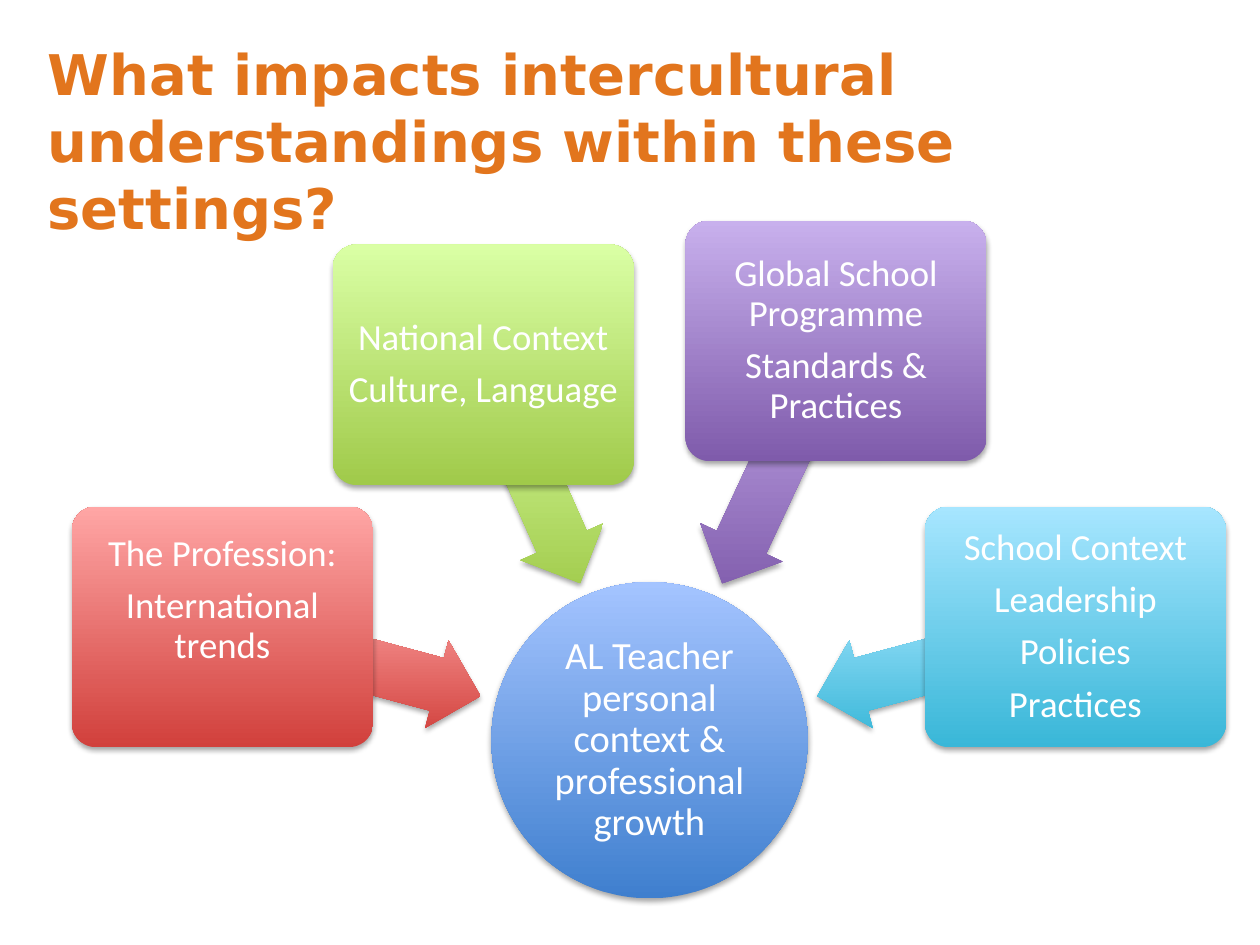
from dataclasses import dataclass

from lxml import etree
from pptx import Presentation
from pptx.dml.color import RGBColor
from pptx.enum.shapes import MSO_SHAPE
from pptx.enum.text import MSO_ANCHOR, PP_ALIGN
from pptx.oxml.ns import qn
from pptx.shapes.autoshape import Shape
from pptx.slide import Slide
from pptx.text.text import TextFrame
from pptx.util import Inches, Pt

ELLIPSE = MSO_SHAPE.OVAL
ROUNDED = MSO_SHAPE.ROUNDED_RECTANGLE
ARROW = MSO_SHAPE.LEFT_ARROW
MIDDLE = MSO_ANCHOR.MIDDLE
CENTER = PP_ALIGN.CENTER
LEFT = PP_ALIGN.LEFT

SLIDE_WIDTH, SLIDE_HEIGHT = Inches(10), Inches(7.5)
COLUMN, ROW = SLIDE_WIDTH / 100, SLIDE_HEIGHT / 75
BOX_COLUMNS, BOX_ROWS = 23.9, 19.1
ARROW_ROWS = 7.2
HUB_SIZE = 25.1
WHITE = "FFFFFF"


@dataclass
class Area:
    column: float
    row: float
    columns: float
    rows: float


@dataclass
class Factor:
    column: float
    row: float
    lines: list[str]
    dark: str
    light: str
    arrow_column: float
    arrow_row: float
    arrow_length: float
    arrow_rotation: float
    lift: float = 0


FACTORS = [
    Factor(5.7, 40.2, ["The Profession:", "International trends"],
           "D1403C", "FFA6A5", 17.3, 48.9, 21.2, 195, lift=0.42),
    Factor(26.4, 19.4, ["National Context", "Culture, Language"],
           "A0CA4A", "DAFFA5", 32.7, 34, 19, 246.1),
    Factor(54.4, 17.5, ["Global School Programme", "Standards & Practices"],
           "7F5BAB", "C8B0ED", 51.2, 33.1, 21.2, 295),
    Factor(73.4, 40.2, ["School Context", "Leadership", "Policies", "Practices"],
           "39B7D8", "A7E6FF", 64.5, 48.9, 21.2, 345),
]


def color(value: str) -> RGBColor:
    return RGBColor.from_string(value)


def place(area: Area) -> tuple[int, int, int, int]:
    return (round(area.column * COLUMN), round(area.row * ROW),
            round(area.columns * COLUMN), round(area.rows * ROW))


def add_shadow(shape: Shape) -> None:
    shape.shadow.inherit = False
    effects = shape._element.spPr.find(qn("a:effectLst"))
    shadow = etree.SubElement(
        effects, qn("a:outerShdw"), blurRad=str(Pt(3.1)), dist=str(Pt(1.8)),
        dir="5400000", rotWithShape="0")
    shade = etree.SubElement(shadow, qn("a:srgbClr"), val="000000")
    etree.SubElement(shade, qn("a:alpha"), val="35000")


def add_gradient_shape(slide: Slide, kind: MSO_SHAPE, area: Area, dark: str,
                       light: str, adjustments: tuple[float, ...] = ()) -> Shape:
    shape = slide.shapes.add_shape(kind, *place(area))
    for index, value in enumerate(adjustments):
        shape.adjustments[index] = value
    shape.fill.gradient()
    shape.fill.gradient_angle = 90
    for stop, value in zip(shape.fill.gradient_stops, (dark, light)):
        stop.color.rgb = color(value)
    shape._element.spPr.find(qn("a:gradFill")).set("rotWithShape", "0")
    shape.line.fill.background()
    add_shadow(shape)
    return shape


def write(frame: TextFrame, lines: list[str], font: dict, text_color: str,
          paragraph_format: dict, margin: float, lift: float = 0) -> None:
    frame_format = {
        "word_wrap": True, "vertical_anchor": MIDDLE,
        "margin_left": Inches(margin), "margin_right": Inches(margin),
        "margin_top": Inches(margin), "margin_bottom": Inches(margin + lift),
    }
    for name, value in frame_format.items():
        setattr(frame, name, value)
    for index, line in enumerate(lines):
        paragraph = frame.paragraphs[0] if index == 0 else frame.add_paragraph()
        for name, value in paragraph_format.items():
            setattr(paragraph, name, value)
        run = paragraph.add_run()
        run.text = line
        for name, value in font.items():
            setattr(run.font, name, value)
        run.font.color.rgb = color(text_color)


def add_factor(slide: Slide, factor: Factor, paragraph_format: dict) -> None:
    arrow_area = Area(factor.arrow_column, factor.arrow_row,
                      factor.arrow_length, ARROW_ROWS)
    arrow = add_gradient_shape(slide, ARROW, arrow_area, factor.dark,
                               factor.light, (0.6, 0.5))
    arrow.rotation = factor.arrow_rotation
    box_area = Area(factor.column, factor.row, BOX_COLUMNS, BOX_ROWS)
    box = add_gradient_shape(slide, ROUNDED, box_area, factor.dark,
                             factor.light, (0.1,))
    write(box.text_frame, factor.lines, {"name": "Calibri", "size": Pt(21)},
          WHITE, paragraph_format, 0.04, factor.lift)


def main() -> None:
    presentation = Presentation()
    presentation.slide_width = SLIDE_WIDTH
    presentation.slide_height = SLIDE_HEIGHT
    slide = presentation.slides.add_slide(presentation.slide_layouts[6])
    centered = {"alignment": CENTER, "line_spacing": 0.9, "space_after": Pt(7.2)}

    hub = add_gradient_shape(slide, ELLIPSE, Area(39, 46.2, HUB_SIZE, HUB_SIZE),
                             "3F7FCE", "A4C4FF")
    write(hub.text_frame, ["AL Teacher personal context & professional growth"],
          {"name": "Calibri", "size": Pt(22)}, WHITE, centered, 0.02)

    for factor in FACTORS:
        add_factor(slide, factor, centered)

    title = slide.shapes.add_textbox(*place(Area(2.8, 6.7, 78.7, 8.8)))
    write(title.text_frame,
          ["What impacts intercultural understandings within these settings?"],
          {"name": "DejaVu Sans", "size": Pt(32), "bold": True},
          "E2751D", {"alignment": LEFT}, 0.1)

    presentation.save("out.pptx")


if __name__ == "__main__":
    main()
